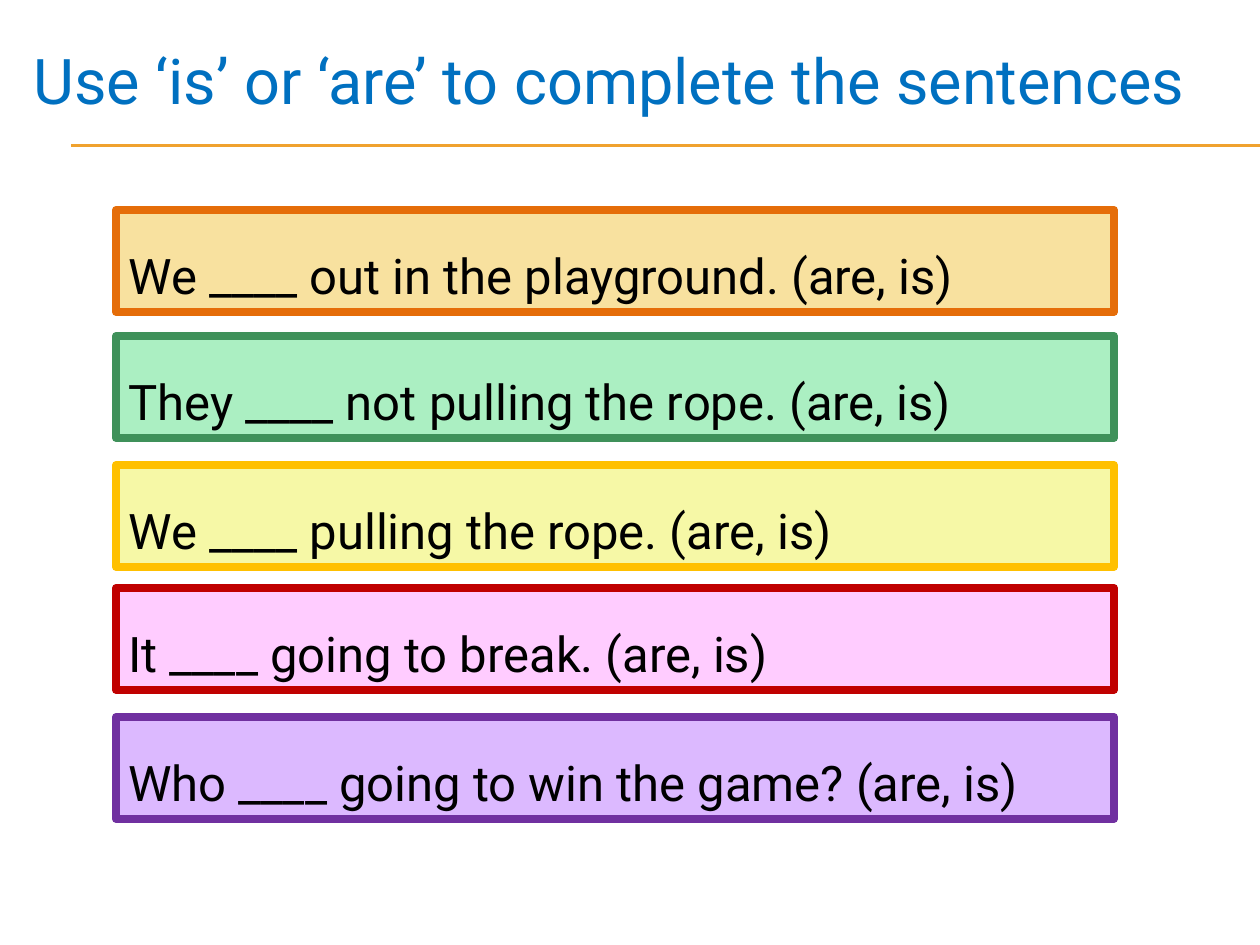
"""Build a grammar exercise slide on choosing between 'is' and 'are'."""
import pptx
import pptx.dml.color
import pptx.enum.shapes
import pptx.enum.text
import pptx.oxml.ns
import pptx.util
from lxml import etree

EMU_PER_PX = 914400 // 126
FONT = "Roboto"
COLORS = {
    "title": "0070C0",
    "rule": "F0A22E",
    "text": "000000",
    "orange": ("F8E19F", "E56D09"),
    "green": ("ABEFC2", "3F915A"),
    "yellow": ("F6F8A6", "FFC000"),
    "red": ("FFCCFF", "C00000"),
    "purple": ("DCB9FF", "7030A0"),
}
SENTENCES = [
    (210, "orange", "We ____ out in the playground. (are, is)"),
    (336, "green", "They ____ not pulling the rope. (are, is)"),
    (465, "yellow", "We ____ pulling the rope. (are, is)"),
    (588, "red", "It ____ going to break. (are, is)"),
    (717, "purple", "Who ____ going to win the game? (are, is)"),
]


def px(length):
    return pptx.util.Emu(length * EMU_PER_PX)


def rgb(hex_color):
    return pptx.dml.color.RGBColor.from_string(hex_color)


def write(paragraph, wording, size, color):
    paragraph.alignment = pptx.enum.text.PP_ALIGN.LEFT
    run = paragraph.add_run()
    run.text = wording
    run.font.name = FONT
    run.font.size = pptx.util.Pt(size)
    run.font.color.rgb = rgb(color)


def set_title(slide, wording):
    title = slide.shapes.title
    title.left, title.top, title.width, title.height = map(px, (21, 21, 1229, 116))
    frame = title.text_frame
    frame.auto_size = pptx.enum.text.MSO_AUTO_SIZE.NONE
    frame.vertical_anchor = pptx.enum.text.MSO_ANCHOR.MIDDLE
    write(frame.paragraphs[0], wording, 36, COLORS["title"])


def add_rule(slide, y):
    rule = slide.shapes.add_connector(
        pptx.enum.shapes.MSO_CONNECTOR.STRAIGHT, px(71), px(y), px(1260), px(y))
    rule.line.color.rgb = rgb(COLORS["rule"])
    rule.line.width = pptx.util.Pt(0.75)
    etree.SubElement(rule._element.spPr, pptx.oxml.ns.qn("a:effectLst"))


def add_sentence(slide, top, palette, wording):
    fill, border = COLORS[palette]
    box = slide.shapes.add_shape(
        pptx.enum.shapes.MSO_SHAPE.RECTANGLE, px(116), px(top), px(998), px(102))
    box.shadow.inherit = False
    box.fill.solid()
    box.fill.fore_color.rgb = rgb(fill)
    box.line.color.rgb = rgb(border)
    box.line.width = pptx.util.Pt(4.5)
    frame = box.text_frame
    frame.word_wrap = True
    frame.auto_size = pptx.enum.text.MSO_AUTO_SIZE.SHAPE_TO_FIT_TEXT
    frame.vertical_anchor = pptx.enum.text.MSO_ANCHOR.TOP
    frame.paragraphs[0].line_spacing = 1.5
    write(frame.paragraphs[0], wording, 28, COLORS["text"])


def main():
    deck = pptx.Presentation()
    deck.slide_width, deck.slide_height = px(1260), px(945)
    slide = deck.slides.add_slide(deck.slide_layouts[5])
    for y in (145, 146):
        add_rule(slide, y)
    set_title(slide, "Use ‘is’ or ‘are’ to complete the sentences")
    for top, palette, wording in SENTENCES:
        add_sentence(slide, top, palette, wording)
    deck.save("out.pptx")


if __name__ == "__main__":
    main()
